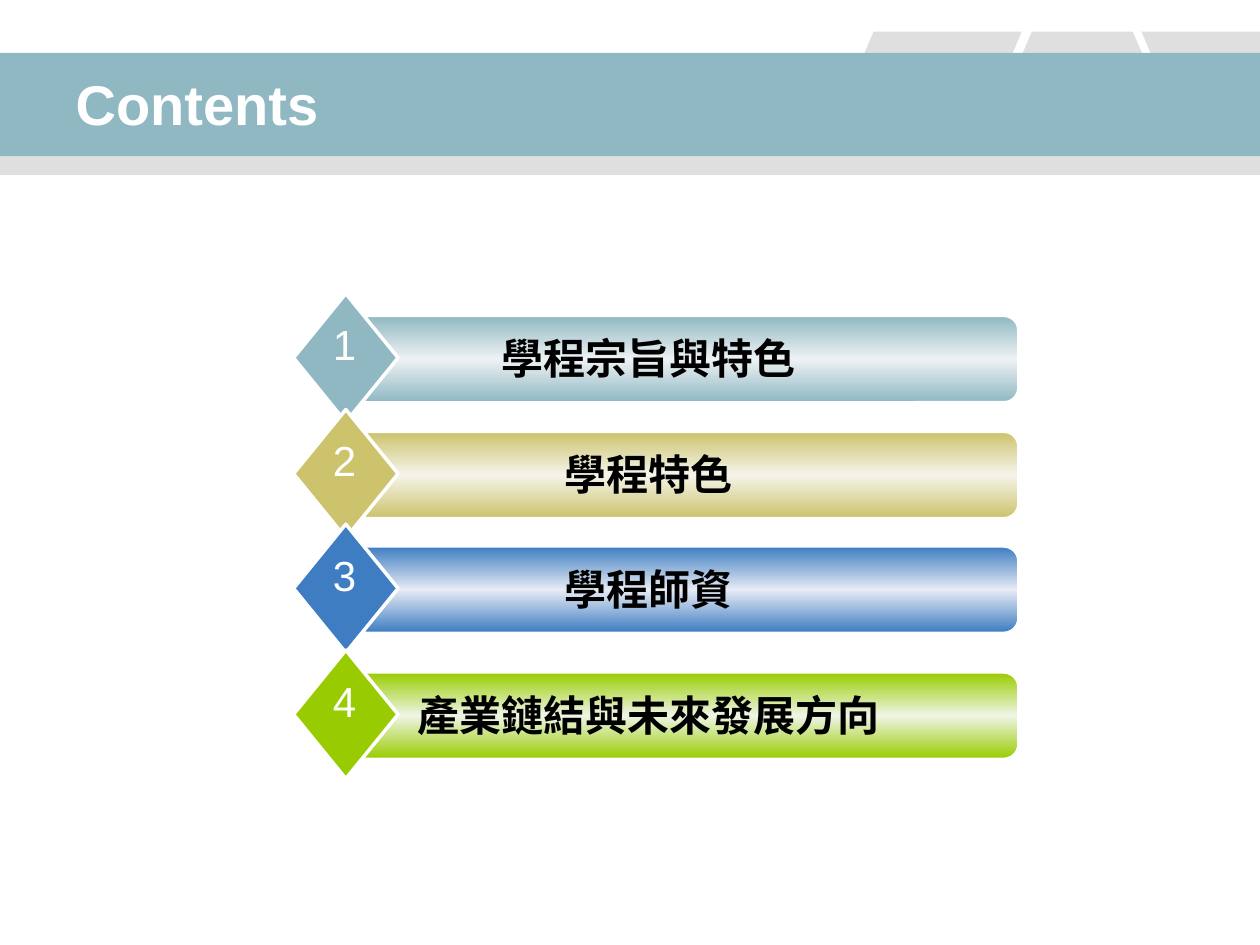
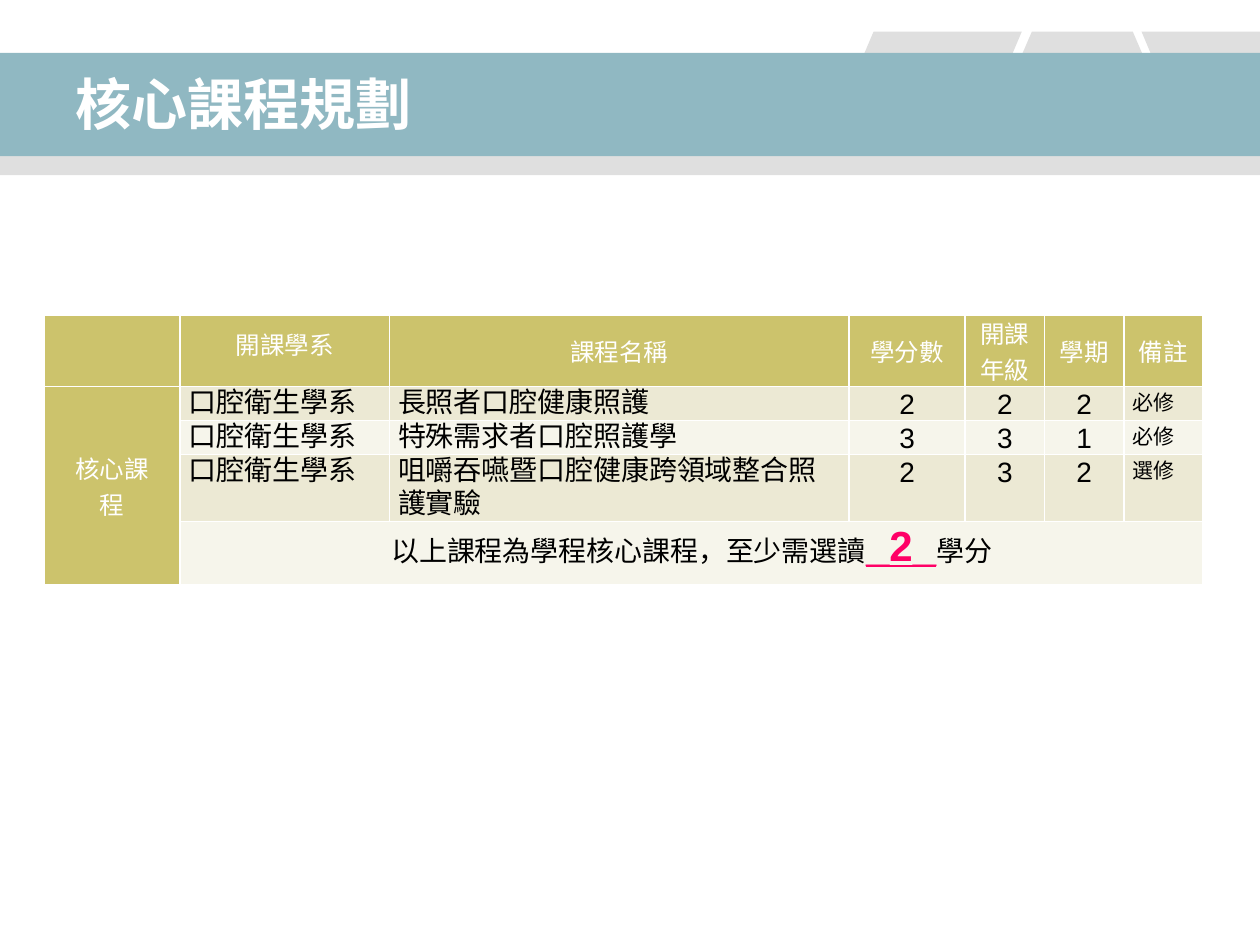
from lxml import etree
from pptx import Presentation
from pptx.dml.color import RGBColor
from pptx.enum.shapes import MSO_SHAPE
from pptx.enum.text import MSO_ANCHOR, PP_ALIGN
from pptx.oxml.ns import qn
from pptx.util import Inches, Pt

LEFT, CENTER = PP_ALIGN.LEFT, PP_ALIGN.CENTER
TOP, MIDDLE = MSO_ANCHOR.TOP, MSO_ANCHOR.MIDDLE
RECTANGLE, PARALLELOGRAM = MSO_SHAPE.RECTANGLE, MSO_SHAPE.PARALLELOGRAM
ROUNDED, DIAMOND = MSO_SHAPE.ROUNDED_RECTANGLE, MSO_SHAPE.DIAMOND

FONT = "Arial"
WHITE, BLACK, TEAL, GRAY = "FFFFFF", "000000", "90B8C2", "808080"
OLIVE, OLIVE_LIGHT, OLIVE_PALE, PINK = "CCC36C", "ECE9D4", "F6F5EB", "FF0066"

CONTENTS_TITLE = "Contents"
# top of the bar, text, edge colour, middle colour
CONTENTS = [
    (2.51, "學程宗旨與特色", TEAL, "EDF2F4"),
    (3.43, "學程特色", OLIVE, "F5F4EA"),
    (4.34, "學程師資", "3E7DC2", "E7EBF4"),
    (5.34, "產業鏈結與未來發展方向", "99CC00", "EEF5E6"),
]

COURSES_TITLE = "核心課程規劃"
COURSE_HEADS = ["", "開課學系", "課程名稱", "學分數", "開課年級", "學期", "備註"]
COURSE_GROUP = "核心課程"
COURSES = [
    ("口腔衛生學系", "長照者口腔健康照護", "2", "2", "2", "必修"),
    ("口腔衛生學系", "特殊需求者口腔照護學", "3", "3", "1", "必修"),
    ("口腔衛生學系", "咀嚼吞嚥暨口腔健康跨領域整合照護實驗", "2", "3", "2", "選修"),
]
CREDIT_RULE = [
    ("以上課程為學程核心課程，至少需選讀", {}),
    ("_2_", dict(size=24, color=PINK, bold=True, underline=True)),
    ("學分", {}),
]
COLUMN_WIDTHS = [1.08, 1.66, 3.65, 0.92, 0.63, 0.63, 0.63]
ROW_HEIGHTS = [0.56, 0.27, 0.27, 0.53, 0.5]

TAB_TOP, TAB_BOTTOM = 0.25, 1.2
TAB_OUTLINES = [
    [(7.78, TAB_BOTTOM), (8.19, TAB_TOP), (8.99, TAB_TOP), (9.4, TAB_BOTTOM)],
    [(9.06, TAB_TOP), (9.46, TAB_BOTTOM), (10, TAB_BOTTOM), (10, TAB_TOP)],
]


def rgb(color):
    return RGBColor.from_string(color)


def place(shape, *bounds):
    shape.left, shape.top, shape.width, shape.height = map(Inches, bounds)


def add_span(para, text, size=16, color=BLACK, bold=False, underline=False):
    span = para.add_run()
    span.text = text
    font = span.font
    font.name, font.size, font.bold, font.underline = FONT, Pt(size), bold, underline
    font.color.rgb = rgb(color)


def write(frame, text, align=LEFT, spacing=None, **style):
    """Write one paragraph; text is a string or a list of (string, format) pairs."""
    para = frame.paragraphs[0]
    para.alignment = align
    if spacing:
        para.line_spacing = Pt(spacing)
    for part, changes in [(text, {})] if isinstance(text, str) else text:
        add_span(para, part, **{**style, **changes})


def paint(shape, color, alpha=None, line=None):
    """Fill a shape; alpha is opacity in percent, line a white outline in points."""
    shape.shadow.inherit = False
    shape.fill.solid()
    shape.fill.fore_color.rgb = rgb(color)
    if alpha:
        color_node = shape.element.spPr.find(f"{qn('a:solidFill')}/{qn('a:srgbClr')}")
        etree.SubElement(color_node, qn("a:alpha"), val=str(alpha * 1000))
    if line:
        shape.line.color.rgb = rgb(WHITE)
        shape.line.width = Pt(line)
    else:
        shape.line.fill.background()


def add_shape(page, kind, bounds, color, **style):
    shape = page.shapes.add_shape(kind, *map(Inches, bounds))
    paint(shape, color, **style)
    return shape


def add_label(page, bounds, text, wrap=True, **style):
    box = page.shapes.add_textbox(*map(Inches, bounds))
    box.text_frame.word_wrap = wrap
    write(box.text_frame, text, align=CENTER, size=24, **style)


def shade(shape, edge, middle):
    """Replace the fill by a vertical gradient from edge to middle and back."""
    shape.fill.gradient()
    shape.fill.gradient_angle = 90
    stops = shape.element.spPr.find(f".//{qn('a:gsLst')}")
    stops.clear()
    for position, color in [(0, edge), (50, middle), (100, edge)]:
        stop = etree.SubElement(stops, qn("a:gs"), pos=str(position * 1000))
        etree.SubElement(stop, qn("a:srgbClr"), val=color)


def set_up_layout(layout, page):
    """Draw the bands and tabs on a page, then move them into its layout."""
    add_shape(page, RECTANGLE, (0, 0.89, 10, 0.5), GRAY, alpha=25)
    tab = add_shape(page, PARALLELOGRAM, (6.53, TAB_TOP, 1.58, 0.95), GRAY, alpha=25)
    tab.adjustments[0] = 0.425
    for (start, *rest) in TAB_OUTLINES:
        builder = page.shapes.build_freeform(*map(Inches, start), scale=1.0)
        builder.add_line_segments([(Inches(x), Inches(y)) for x, y in rest])
        paint(builder.convert_to_shape(), GRAY, alpha=25)
    add_shape(page, RECTANGLE, (0, 0.42, 10, 0.82), TEAL)

    place(layout.placeholders[0], 0.5, 0.47, 6.17, 0.7)
    bands = [shape for shape in page.shapes if not shape.is_placeholder]
    for number, band in enumerate(bands, start=100):
        band.element.find(f".//{qn('p:cNvPr')}").set("id", str(number))
        layout.shapes.element.append(band.element)


def set_title(page, text):
    title = page.shapes.title
    place(title, 0.5, 0.47, 6.17, 0.7)
    title.text_frame.vertical_anchor = MIDDLE
    write(title.text_frame, text, size=32, color=WHITE, bold=True)


def fill_contents(page):
    set_title(page, CONTENTS_TITLE)
    for number, (top, text, edge, middle) in enumerate(CONTENTS, start=1):
        bar = add_shape(page, ROUNDED, (2.8, top, 5.28, 0.68), edge, line=1)
        bar.adjustments[0] = 0.167
        shade(bar, edge, middle)
        add_shape(page, DIAMOND, (2.33, top - 0.18, 0.83, 1.02), edge, line=2)
        add_label(page, (3.07, top + 0.08, 4.16, 0.55), text, bold=True)
        add_label(page, (2.52, top - 0.03, 0.43, 0.5), str(number), wrap=False, color=WHITE)


def format_cell(cell, text, fill, anchor=TOP, inset=0.07, **style):
    cell.margin_left = cell.margin_right = Inches(inset)
    cell.margin_top = cell.margin_bottom = 0
    cell.vertical_anchor = anchor
    properties = cell._tc.get_or_add_tcPr()
    for side in ("a:lnL", "a:lnR", "a:lnT", "a:lnB"):
        border = etree.SubElement(properties, qn(side), w=str(Pt(1)))
        solid = etree.SubElement(border, qn("a:solidFill"))
        etree.SubElement(solid, qn("a:srgbClr"), val=WHITE)
    cell.fill.solid()
    cell.fill.fore_color.rgb = rgb(fill)
    if text:
        write(cell.text_frame, text, **style)


def fill_courses(page):
    set_title(page, COURSES_TITLE)
    bounds = (0.35, 2.5, sum(COLUMN_WIDTHS), sum(ROW_HEIGHTS))
    table = page.shapes.add_table(
        len(ROW_HEIGHTS), len(COLUMN_WIDTHS), *map(Inches, bounds)).table
    for column, width in zip(table.columns, COLUMN_WIDTHS):
        column.width = Inches(width)
    for row, height in zip(table.rows, ROW_HEIGHTS):
        row.height = Inches(height)
    last_row, last_column = len(ROW_HEIGHTS) - 1, len(COLUMN_WIDTHS) - 1
    table.cell(1, 0).merge(table.cell(last_row, 0))
    table.cell(last_row, 1).merge(table.cell(last_row, last_column))

    head = dict(fill=OLIVE, anchor=MIDDLE, align=CENTER, size=14, color=WHITE)
    for column, text in enumerate(COURSE_HEADS):
        format_cell(table.cell(0, column), text, spacing=12 if column == 1 else None, **head)
    format_cell(table.cell(1, 0), COURSE_GROUP, inset=0.2, **head)

    for row, course in enumerate(COURSES, start=1):
        fill = OLIVE_LIGHT if row % 2 else OLIVE_PALE
        for column, text in enumerate(course, start=1):
            if column == last_column:
                style = dict(size=12)
            else:
                style = dict(spacing=19.2, align=LEFT if column < 3 else CENTER)
            format_cell(table.cell(row, column), text, fill, **style)
    format_cell(table.cell(last_row, 1), CREDIT_RULE, OLIVE_PALE,
                anchor=MIDDLE, align=CENTER, spacing=19.2)


def main():
    deck = Presentation()
    deck.slide_width, deck.slide_height = Inches(10), Inches(7.5)
    layout = deck.slide_layouts.get_by_name("Title Only")
    contents, courses = (deck.slides.add_slide(layout) for _ in range(2))
    set_up_layout(layout, contents)
    fill_contents(contents)
    fill_courses(courses)
    deck.save("out.pptx")


if __name__ == "__main__":
    main()
